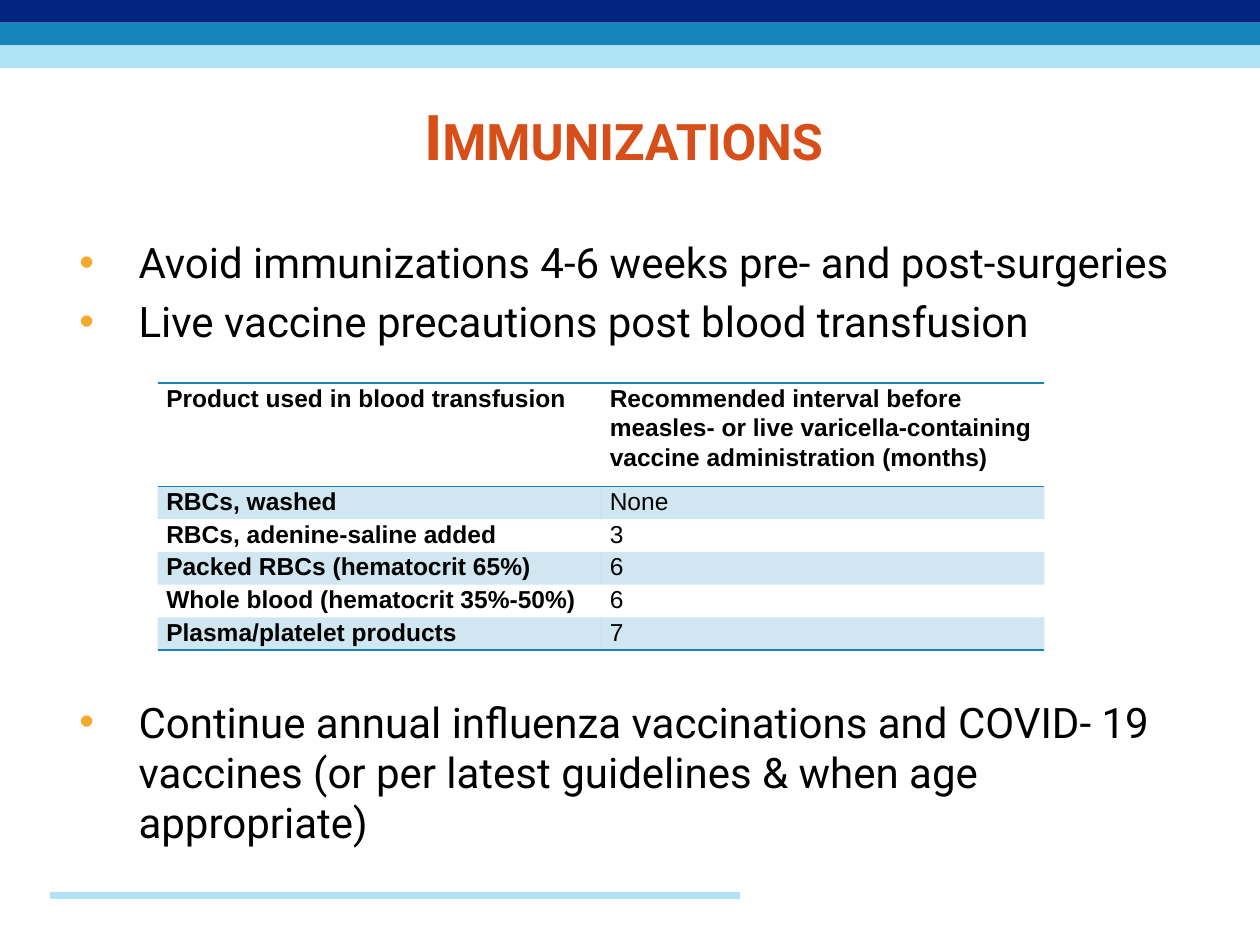
from lxml import etree
from pptx import Presentation
from pptx import util as u
from pptx.dml import color
from pptx.enum import shapes, text
from pptx.oxml import ns

theme = {
    "navy": "00247F", "blue": "1585B9", "sky": "AFE3F5",
    "rust": "D84E19", "gold": "F5AA2C", "ink": "000000",
    "head": 36, "body": 24, "cell": 14,
    "sans": "Roboto", "grid": "Arial",
}


def style(font, tint, **form):
    for key, val in form.items():
        setattr(font, key, val)
    font.color.rgb = color.RGBColor.from_string(theme[tint])


def add(root, tag, **form):
    return etree.SubElement(root, ns.qn(tag), form)


deck = Presentation()
deck.slide_width, deck.slide_height = u.Inches(10), u.Inches(7.5)
slide = deck.slides.add_slide(deck.slide_layouts[1])

for i, tint in enumerate(["navy", "blue", "sky"]):
    bar = slide.shapes.add_shape(
        shapes.MSO_SHAPE.RECTANGLE, 0, u.Inches(0.18 * i), u.Inches(10), u.Inches(0.18))
    bar.shadow.inherit = False
    bar.fill.solid()
    bar.fill.fore_color.rgb = color.RGBColor.from_string(theme[tint])
    bar.line.fill.background()

rule = slide.shapes.add_connector(
    shapes.MSO_CONNECTOR.STRAIGHT, u.Inches(0.4), u.Inches(7.11), u.Inches(5.87), u.Inches(7.11))
rule.line.width = u.Pt(4)
rule.line.color.rgb = color.RGBColor.from_string(theme["sky"])
add(rule._element.spPr, "a:effectLst")

title, body = slide.shapes.title, slide.placeholders[1]
places = [(title, 0.5, 0.72, 9, 0.71, text.MSO_ANCHOR.MIDDLE),
          (body, 0.5, 1.83, 9.1, 4.95, text.MSO_ANCHOR.TOP)]
for box, left, top, width, height, anchor in places:
    form = {"left": left, "top": top, "width": width, "height": height}
    for key, val in form.items():
        setattr(box, key, u.Inches(val))
    box.text_frame.word_wrap = True
    box.text_frame.auto_size = text.MSO_AUTO_SIZE.NONE
    box.text_frame.vertical_anchor = anchor

title.text_frame.text = "Immunizations "
para = title.text_frame.paragraphs[0]
para.alignment = text.PP_ALIGN.CENTER
run = para.runs[0]
style(run.font, "rust", name=theme["sans"], size=u.Pt(theme["head"]), bold=True)
run.font._element.set("cap", "small")

points = [
    ("Avoid immunizations 4-6 weeks pre- and post-surgeries", 0),
    ("Live vaccine precautions post blood transfusion", 4.8),
    ("Continue annual influenza vaccinations and COVID- 19 vaccines "
     "(or per latest guidelines & when age appropriate)", 200),
]
body.text_frame.text = "\n".join(words for words, gap in points)
for para, (words, gap) in zip(body.text_frame.paragraphs, points):
    props = para._p.get_or_add_pPr()
    props.set("marL", str(u.Inches(0.5)))
    props.set("indent", str(u.Inches(-0.47)))
    add(add(props, "a:buClr"), "a:srgbClr", val=theme["gold"])
    add(props, "a:buFont", typeface="Arial")
    add(props, "a:buChar", char="•")
    para.space_before = u.Pt(gap)
    style(para.runs[0].font, "ink", name=theme["sans"], size=u.Pt(theme["body"]))

rows = [
    ("Product used in blood transfusion",
     "Recommended interval before measles- or live varicella-containing "
     "vaccine administration (months)"),
    ("RBCs, washed", "None"),
    ("RBCs, adenine-saline added", "3"),
    ("Packed RBCs (hematocrit 65%)", "6"),
    ("Whole blood (hematocrit 35%-50%)", "6"),
    ("Plasma/platelet products", "7"),
]
frame = slide.shapes.add_table(
    len(rows), 2, u.Inches(1.25), u.Inches(3.04), u.Inches(7.04), u.Inches(2.14))
table = frame.table
table.first_row = table.horz_banding = False
look = table._tbl.tblPr.find(ns.qn("a:tableStyleId"))
look.text = "{2D5ABB26-0587-4C30-8999-92F81FD0307C}"
edges = {0: ["a:lnT", "a:lnB"], len(rows) - 1: ["a:lnB"]}
pads = {"margin_left": 0.07, "margin_right": 0.07, "margin_top": 0, "margin_bottom": 0}

for r, row in enumerate(rows):
    table.rows[r].height = u.Inches(0.26 if r else 0.82)
    for c, words in enumerate(row):
        cell = table.cell(r, c)
        cell.text = words
        for key, val in pads.items():
            setattr(cell, key, u.Inches(val))
        para = cell.text_frame.paragraphs[0]
        para.line_spacing = 1.07
        style(para.runs[0].font, "ink", name=theme["grid"],
              size=u.Pt(theme["cell"]), bold=r == 0 or c == 0)
        props = cell._tc.get_or_add_tcPr()
        for tag in edges.get(r, []):
            edge = add(props, tag, w=str(u.Pt(1)))
            add(add(edge, "a:solidFill"), "a:srgbClr", val=theme["blue"])
        if r % 2:
            tint = add(add(props, "a:solidFill"), "a:srgbClr", val=theme["blue"])
            add(tint, "a:alpha", val="20000")
        else:
            add(props, "a:noFill")

deck.save("out.pptx")
